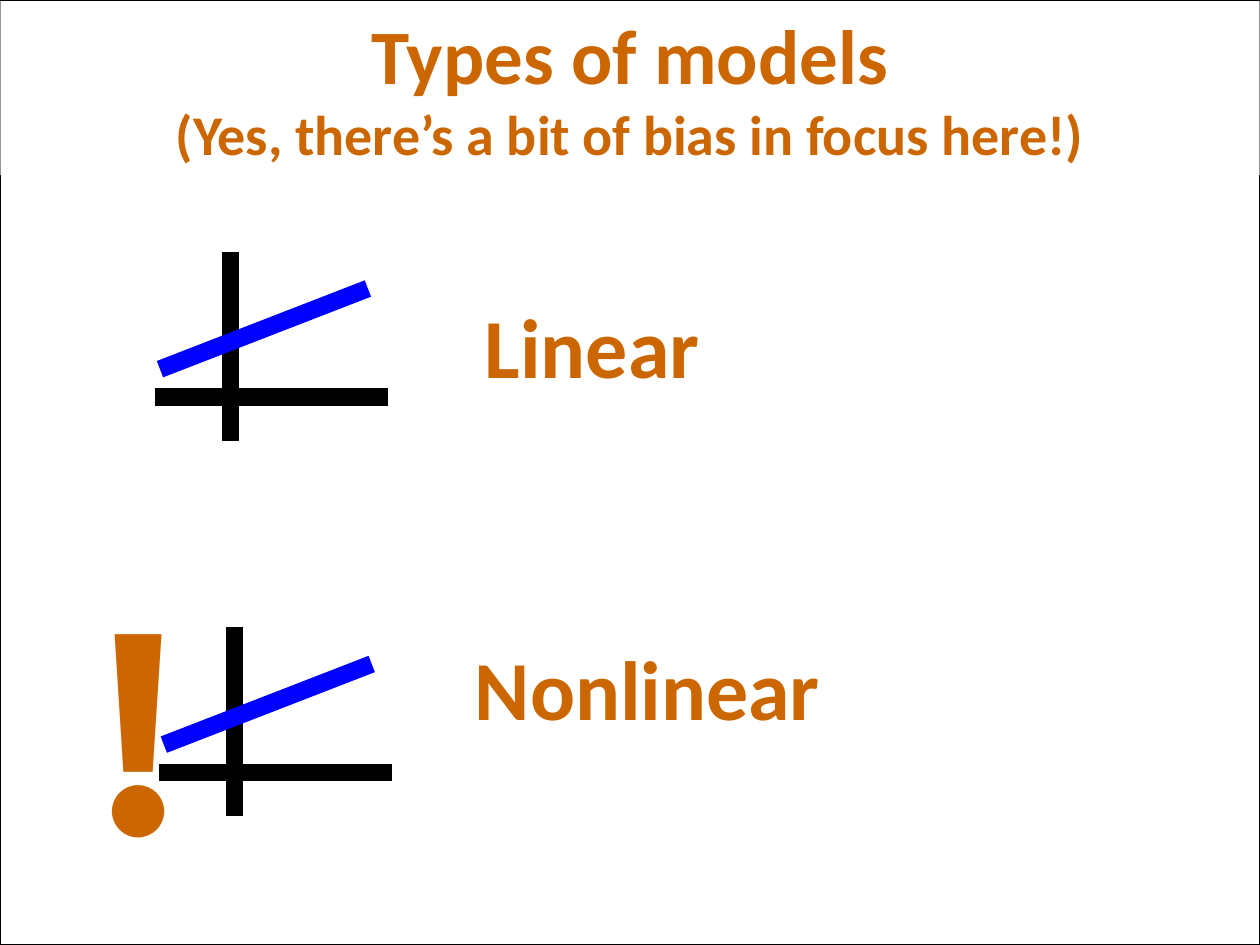
from dataclasses import dataclass

from lxml.etree import SubElement
from pptx import Presentation
from pptx.dml.color import RGBColor
from pptx.enum.shapes import MSO_CONNECTOR, MSO_SHAPE
from pptx.enum.text import MSO_ANCHOR, MSO_AUTO_SIZE, PP_ALIGN
from pptx.oxml.ns import qn
from pptx.util import Inches, Pt

COLORS = {"paper": "FFFFFF", "ink": "000000", "accent": "CC6600", "trend": "0000FF"}


@dataclass
class Label:
    text: str
    left: float
    top: float


@dataclass
class Stroke:
    start: tuple[float, float]
    end: tuple[float, float]
    color: str


LABELS = [Label("Linear", 3.75, 2.29), Label("Nonlinear", 3.67, 5)]

# Both axes and the trend line, measured from the corner of a graph
GRAPH_STROKES = [
    Stroke((0.6, 0), (0.6, 1.5), "ink"),
    Stroke((1.85, 1.15), (0, 1.15), "ink"),
    Stroke((1.69, 0.29), (0.04, 0.93), "trend"),
]
GRAPH_CORNERS = [(1.23, 2), (1.26, 4.98)]


def rgb(name: str) -> RGBColor:
    return RGBColor.from_string(COLORS[name])


def fill_translucent(shape) -> None:
    shape.fill.solid()
    shape.fill.fore_color.rgb = rgb("paper")
    color = shape.fill._xPr.find(f"{qn('a:solidFill')}/{qn('a:srgbClr')}")
    SubElement(color, qn("a:alpha"), val="58000")


def write(shape, lines: list[tuple[str, int]], font: str, align, wrap: bool = True) -> None:
    frame = shape.text_frame
    frame.text = "\n".join(text for text, _ in lines)
    frame.word_wrap = wrap
    frame.auto_size = MSO_AUTO_SIZE.SHAPE_TO_FIT_TEXT
    frame.vertical_anchor = MSO_ANCHOR.TOP
    for paragraph, (_, size) in zip(frame.paragraphs, lines):
        paragraph.alignment = align
        paragraph.font.name = font
        paragraph.font.size = Pt(size)
        paragraph.font.bold = True
        paragraph.font.color.rgb = rgb("accent")


def add_frame(page) -> None:
    frame = page.shapes.add_shape(MSO_SHAPE.RECTANGLE, 0, 0, Inches(10), Inches(7.5))
    frame.shadow.inherit = False
    frame.fill.solid()
    frame.fill.fore_color.rgb = rgb("paper")
    frame.line.color.rgb = rgb("ink")
    frame.line.width = Pt(0.75)
    # Send the frame behind the title
    page.shapes.title._element.addprevious(frame._element)


def set_title(page) -> None:
    title = page.shapes.title
    title.left, title.top = Inches(0), Inches(0.01)
    title.width, title.height = Inches(10), Inches(1.38)
    fill_translucent(title)
    lines = [("Types of models", 44), ("(Yes, there’s a bit of bias in focus here!)", 32)]
    write(title, lines, "Calibri", PP_ALIGN.CENTER)


def add_label(page, label: Label) -> None:
    box = page.shapes.add_textbox(
        Inches(label.left), Inches(label.top), Inches(5.17), Inches(0.91))
    fill_translucent(box)
    write(box, [(label.text, 48)], "Calibri", PP_ALIGN.LEFT)


def add_graph(page, left: float, top: float) -> None:
    for stroke in GRAPH_STROKES:
        (x1, y1), (x2, y2) = stroke.start, stroke.end
        line = page.shapes.add_connector(
            MSO_CONNECTOR.STRAIGHT,
            Inches(left + x1), Inches(top + y1), Inches(left + x2), Inches(top + y2))
        line.line.color.rgb = rgb(stroke.color)
        line.line.width = Pt(10)
        SubElement(line._element.spPr, qn("a:effectLst"))


def main() -> None:
    deck = Presentation()
    deck.slide_width, deck.slide_height = Inches(10), Inches(7.5)
    page = deck.slides.add_slide(deck.slide_layouts[5])

    # Frame and title
    add_frame(page)
    set_title(page)

    # Model names
    for label in LABELS:
        add_label(page, label)

    # Exclamation mark that negates the second graph
    mark = page.shapes.add_textbox(Inches(0.67), Inches(4.27), Inches(0.85), Inches(2.89))
    write(mark, [("!", 166)], "League Spartan", PP_ALIGN.LEFT, wrap=False)

    # Graphs
    for left, top in GRAPH_CORNERS:
        add_graph(page, left, top)

    deck.save("out.pptx")


if __name__ == "__main__":
    main()
